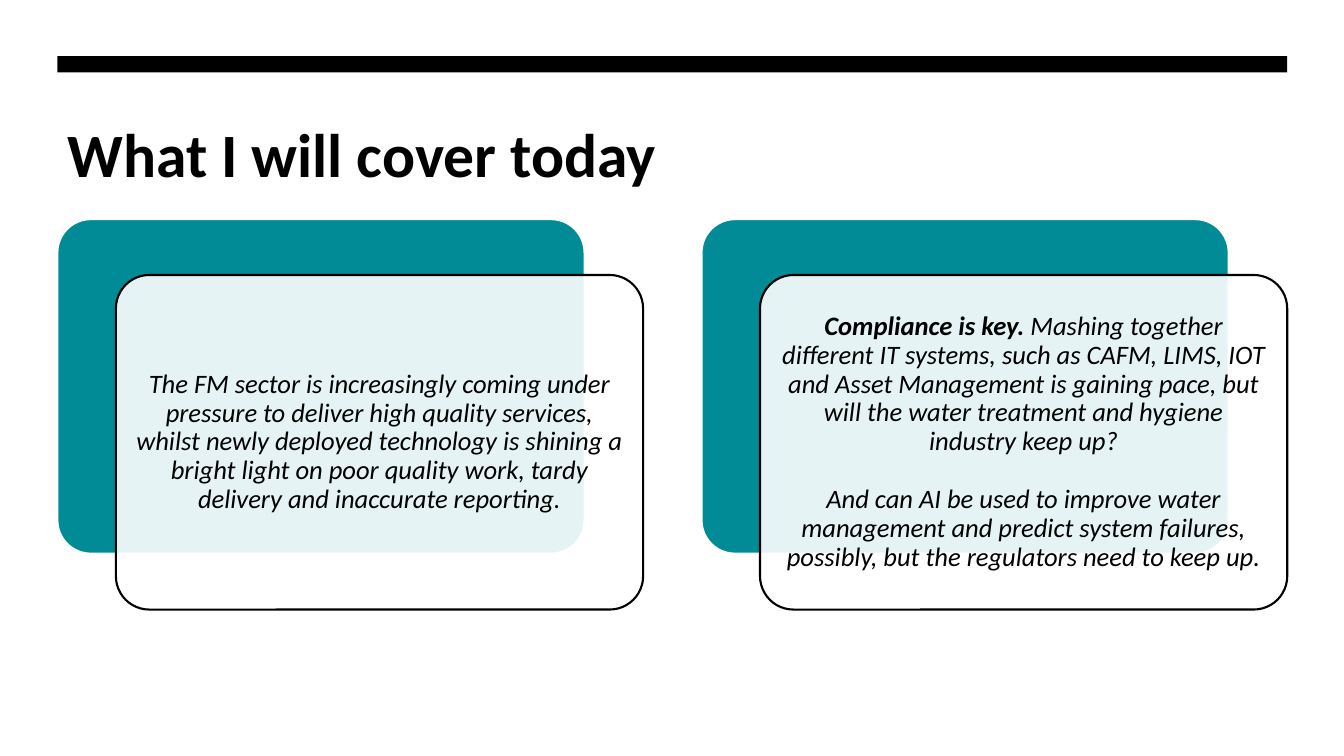
from dataclasses import dataclass

from lxml import etree
from pptx import Presentation
from pptx.dml.color import RGBColor
from pptx.enum.shapes import MSO_SHAPE
from pptx.enum.text import MSO_ANCHOR, MSO_AUTO_SIZE, PP_ALIGN
from pptx.oxml.ns import qn
from pptx.shapes.autoshape import Shape
from pptx.slide import Slide
from pptx.util import Pt

RECTANGLE = MSO_SHAPE.RECTANGLE
ROUNDED = MSO_SHAPE.ROUNDED_RECTANGLE
TOP, MIDDLE = MSO_ANCHOR.TOP, MSO_ANCHOR.MIDDLE
LEFT, CENTER = PP_ALIGN.LEFT, PP_ALIGN.CENTER
NO_AUTOFIT = MSO_AUTO_SIZE.NONE

FONT = "Calibri"
BLACK, WHITE, TEAL = "000000", "FFFFFF", "008B96"

MARGIN, CONTENT_WIDTH = 41, 878.4
CARD_TOP, CARD_WIDTH, CARD_HEIGHT = 156.5, 376.6, 239
CARD_PITCH = 460.1
OFFSET_X, OFFSET_Y = 41.8, 39.9
BLANK_LINE = 20.9


@dataclass(frozen=True)
class Run:
    text: str
    bold: bool = False


@dataclass(frozen=True)
class Card:
    paragraphs: tuple[tuple[Run, ...], ...]


CARDS = (
    Card(((Run(
        "The FM sector is increasingly coming under pressure to deliver high "
        "quality services, whilst newly deployed technology is shining a bright "
        "light on poor quality work, tardy delivery and inaccurate reporting."),),)),
    Card((
        (Run("Compliance is key. ", bold=True),
         Run("Mashing together different IT systems, such as CAFM, LIMS, IOT and "
             "Asset Management is gaining pace, but will the water treatment and "
             "hygiene industry keep up?")),
        (Run("And can AI be used to improve water management and predict system "
             "failures, possibly, but the regulators need to keep up."),),
    )),
)


def color(value: str) -> RGBColor:
    return RGBColor.from_string(value)


def add_filled_shape(slide: Slide, kind: MSO_SHAPE, left: float, top: float,
                     width: float, height: float, fill: str) -> Shape:
    shape = slide.shapes.add_shape(kind, Pt(left), Pt(top), Pt(width), Pt(height))
    shape.shadow.inherit = False
    shape.fill.solid()
    shape.fill.fore_color.rgb = color(fill)
    shape.line.fill.background()
    return shape


def add_panel(slide: Slide, left: float, top: float, fill: str, line: str) -> Shape:
    """Add one of the two rounded rectangles that make up a card."""
    panel = add_filled_shape(slide, ROUNDED, left, top, CARD_WIDTH, CARD_HEIGHT, fill)
    panel.adjustments[0] = 0.1
    panel.line.color.rgb = color(line)
    panel.line.width = Pt(1.5)
    return panel


def set_opacity(shape: Shape, percent: int) -> None:
    fill_color = shape.fill._xPr.find(qn("a:solidFill"))[0]
    etree.SubElement(fill_color, qn("a:alpha")).set("val", str(percent * 1000))


def write_card_text(shape: Shape, card: Card) -> None:
    frame = shape.text_frame
    frame.word_wrap = True
    frame.vertical_anchor = MIDDLE
    frame.margin_left = frame.margin_right = Pt(5.7)
    frame.margin_top = frame.margin_bottom = Pt(5.7)
    for index, runs in enumerate(card.paragraphs):
        paragraph = frame.add_paragraph() if index else frame.paragraphs[0]
        paragraph.alignment = CENTER
        paragraph.line_spacing = 0.9
        if index:
            paragraph.space_before = Pt(BLANK_LINE)
        paragraph.font.name = FONT
        paragraph.font.size = Pt(19)
        paragraph.font.italic = True
        paragraph.font.color.rgb = color(BLACK)
        for part in runs:
            run = paragraph.add_run()
            run.text = part.text
            if part.bold:
                run.font.bold = True


def add_card(slide: Slide, left: float, card: Card) -> None:
    add_panel(slide, left, CARD_TOP, TEAL, WHITE)
    front = add_panel(slide, left + OFFSET_X, CARD_TOP + OFFSET_Y, WHITE, BLACK)
    set_opacity(front, 90)
    write_card_text(front, card)


def write_title(slide: Slide, text: str) -> None:
    title = slide.shapes.title
    title.left, title.top = Pt(MARGIN), Pt(77)
    title.width, title.height = Pt(CONTENT_WIDTH), Pt(115.2)
    frame = title.text_frame
    frame.text = text
    frame.auto_size = NO_AUTOFIT
    frame.vertical_anchor = TOP
    frame.margin_top = Pt(6)
    paragraph = frame.paragraphs[0]
    paragraph.alignment = LEFT
    paragraph.font.name = FONT
    paragraph.font.size = Pt(44)
    paragraph.font.bold = True
    paragraph.font.color.rgb = color(BLACK)


def main() -> None:
    presentation = Presentation()
    presentation.slide_width, presentation.slide_height = Pt(960), Pt(540)
    slide = presentation.slides.add_slide(presentation.slide_layouts[5])
    write_title(slide, "What I will cover today")
    add_filled_shape(slide, RECTANGLE, MARGIN, 40.2, CONTENT_WIDTH, 11.5, BLACK)
    for index, card in enumerate(CARDS):
        add_card(slide, MARGIN + index * CARD_PITCH, card)
    presentation.save("out.pptx")


if __name__ == "__main__":
    main()
